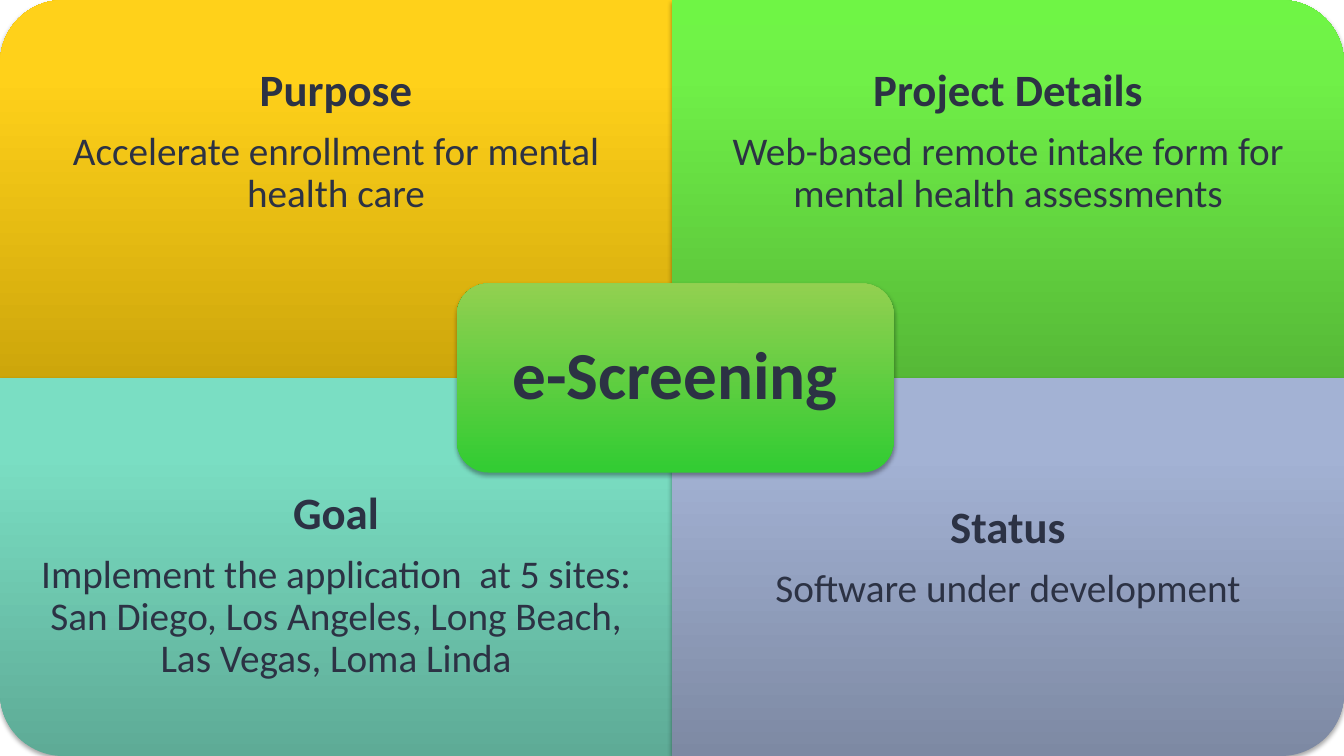
"""Build the e-Screening overview slide: four quadrants around a central plate."""
from typing import NamedTuple

import lxml.etree
import pptx
import pptx.dml.color
import pptx.enum.shapes
import pptx.enum.text
import pptx.oxml
import pptx.oxml.ns
import pptx.util

MSO_SHAPE = pptx.enum.shapes.MSO_SHAPE
SLIDE_W, SLIDE_H = 13.33, 7.5
FONT = "Calibri"
COLORS = {
    "text": "2C3244",
    "shadow": "000000",
    "gold": ("CDA60B", "FFD11A", "FFD11B"),
    "lime": ("56B937", "70F048", "6FF545"),
    "teal": ("5EAB96", "7ADEC3", "78E1C5"),
    "slate": ("7D89A3", "A3B2D4", "A3B3D6"),
    "plate": ("33CC33", "92D050"),
}
QUADRANT_STOPS = (0, 80, 100)
PLATE_STOPS = (2, 100)


class Area(NamedTuple):
    """Left, top, width and height as shares of the slide."""
    x: float
    y: float
    w: float
    h: float


class Quadrant(NamedTuple):
    """One quadrant; lift is the share of slide height kept free below its text."""
    col: int
    row: int
    rotation: int
    color: str
    heading: str
    body: str
    lift: float


class Line(NamedTuple):
    """One paragraph of centred text."""
    text: str
    size: int
    bold: bool
    after: int = 0


QUADRANTS = [
    Quadrant(0, 0, 270, "gold", "Purpose",
             "Accelerate enrollment for mental health care", 0),
    Quadrant(1, 0, 0, "lime", "Project Details",
             "Web-based remote intake form for mental health assessments", 0),
    Quadrant(0, 1, 180, "teal", "Goal",
             "Implement the application  at 5 sites: San Diego, Los Angeles, "
             "Long Beach, Las Vegas, Loma Linda", 0.075),
    Quadrant(1, 1, 90, "slate", "Status", "Software under development", 0.15),
]
PLATE = Area(0.34, 0.375, 0.325, 0.25)


def to_box(area: Area) -> tuple:
    """Turn slide shares into lengths."""
    return tuple(pptx.util.Inches(share * size)
                 for share, size in zip(area, (SLIDE_W, SLIDE_H) * 2))


def add_panel(s, kind, area: Area, color: str, stops: tuple, rotation: int = 0):
    """Add a shape with a vertical gradient and a soft shadow."""
    x, y, w, h = to_box(area)
    if rotation % 180:
        x, y, w, h = x + (w - h) // 2, y + (h - w) // 2, h, w
    sp = s.shapes.add_shape(kind, x, y, w, h)
    sp.rotation = rotation
    sp.line.fill.background()
    sp.shadow.inherit = False
    sp.fill.background()
    props = sp.element.spPr
    ns = pptx.oxml.ns.nsdecls("a")
    gs = "".join(f'<a:gs pos="{pos * 1000}"><a:srgbClr val="{rgb}"/></a:gs>'
                 for pos, rgb in zip(stops, COLORS[color]))
    gradient = pptx.oxml.parse_xml(
        f'<a:gradFill {ns} rotWithShape="0"><a:gsLst>{gs}</a:gsLst>'
        '<a:lin ang="16200000" scaled="0"/></a:gradFill>')
    props.replace(props.find(pptx.oxml.ns.qn("a:noFill")), gradient)
    shadow = pptx.oxml.parse_xml(
        f'<a:outerShdw {ns} blurRad="{pptx.util.Pt(3.1)}" dist="{pptx.util.Pt(1.8)}" '
        f'dir="5400000" rotWithShape="0"><a:srgbClr val="{COLORS["shadow"]}">'
        '<a:alpha val="35000"/></a:srgbClr></a:outerShdw>')
    props.find(pptx.oxml.ns.qn("a:effectLst")).append(shadow)
    return sp


def write_lines(sp, lines: list[Line], bottom: float = 0) -> None:
    """Fill a shape with centred paragraphs, anchored in the middle."""
    tf = sp.text_frame
    tf.word_wrap = True
    tf.vertical_anchor = pptx.enum.text.MSO_ANCHOR.MIDDLE
    tf.margin_left = tf.margin_right = pptx.util.Inches(0.25)
    tf.margin_top = 0
    tf.margin_bottom = pptx.util.Inches(bottom)
    for i, line in enumerate(lines):
        p = tf.add_paragraph() if i else tf.paragraphs[0]
        p.alignment = pptx.enum.text.PP_ALIGN.CENTER
        p.line_spacing = 0.9
        p.space_after = pptx.util.Pt(line.after)
        r = p.add_run()
        r.text = line.text
        r.font.name = FONT
        r.font.size = pptx.util.Pt(line.size)
        r.font.bold = line.bold
        r.font.color.rgb = pptx.dml.color.RGBColor.from_string(COLORS["text"])


def add_quadrant(s, quad: Quadrant) -> None:
    """Add a quadrant and the text in its outer three quarters."""
    area = Area(quad.col / 2, quad.row / 2, 0.5, 0.5)
    add_panel(s, MSO_SHAPE.ROUND_1_RECTANGLE, area, quad.color,
              QUADRANT_STOPS, quad.rotation)
    text_area = area._replace(y=quad.row * 0.625, h=0.375)
    tb = s.shapes.add_textbox(*to_box(text_area))
    write_lines(tb, [Line(quad.heading, 32, True, 11), Line(quad.body, 28, False)],
                quad.lift * SLIDE_H)


def main() -> None:
    """Draw the slide and save it."""
    prs = pptx.Presentation()
    prs.slide_width = pptx.util.Inches(SLIDE_W)
    prs.slide_height = pptx.util.Inches(SLIDE_H)
    s = prs.slides.add_slide(prs.slide_layouts[6])
    for quad in QUADRANTS:
        add_quadrant(s, quad)
    plate = add_panel(s, MSO_SHAPE.ROUNDED_RECTANGLE, PLATE, "plate", PLATE_STOPS)
    write_lines(plate, [Line("e-Screening", 48, True)])
    prs.save("out.pptx")


if __name__ == "__main__":
    main()
